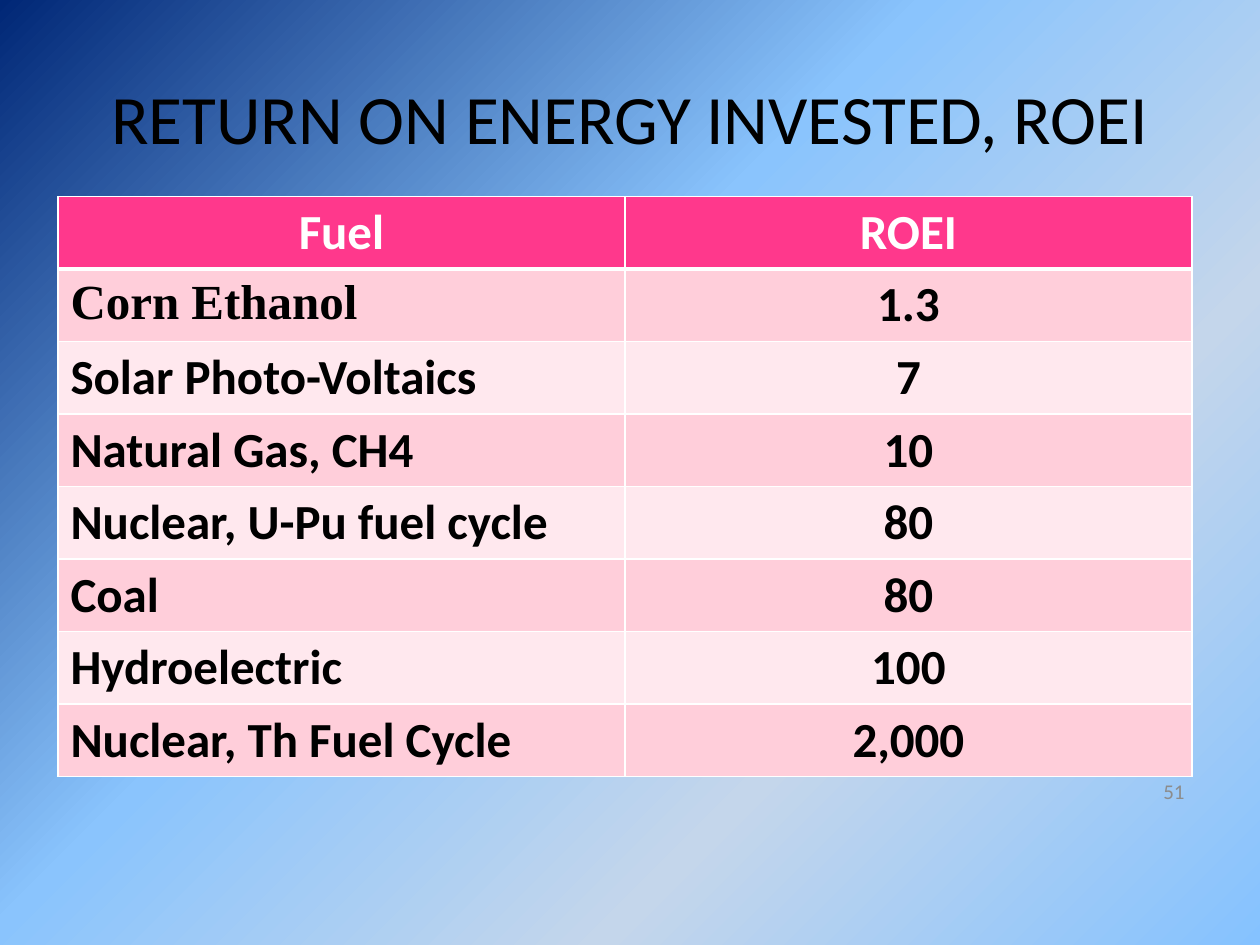
"""Build a slide with a table of the return on energy invested for seven fuels."""
from dataclasses import dataclass

from lxml import etree
from pptx import Presentation
from pptx import util as u
from pptx.dml.color import RGBColor
from pptx.enum import text
from pptx.oxml import ns


@dataclass(frozen=True)
class Theme:
    font: str = "Calibri"
    serif: str = "Times New Roman"
    ink: str = "000000"
    white: str = "FFFFFF"
    grey: str = "8C8C8C"
    header: str = "FF388C"
    bands: tuple = ("FFCEDA", "FFE8EE")
    sky: tuple = ((0, "002776"), (42, "8AC4FD"), (70, "C4D6EB"), (100, "85C2FF"))
    title_size: float = 39.6
    table_size: float = 28
    number_size: float = 12


theme = Theme()
ROWS = [
    ("Fuel", "ROEI"),
    ("Corn Ethanol", "1.3"),
    ("Solar Photo-Voltaics", "7"),
    ("Natural Gas, CH4", "10"),
    ("Nuclear, U-Pu fuel cycle", "80"),
    ("Coal", "80"),
    ("Hydroelectric", "100"),
    ("Nuclear, Th Fuel Cycle", "2,000"),
]


def write(frame, words, size, color, align, name=theme.font, bold=False):
    para = frame.paragraphs[0]
    para.text = words
    para.alignment = align
    para.font.name, para.font.size, para.font.bold = name, u.Pt(size), bold
    para.font.color.rgb = RGBColor.from_string(color)


def add_border(cell, place, side, points):
    line = etree.Element(ns.qn(f"a:ln{side}"), w=str(u.Pt(points)))
    solid = etree.SubElement(line, ns.qn("a:solidFill"))
    etree.SubElement(solid, ns.qn("a:srgbClr"), val=theme.white)
    cell._tc.get_or_add_tcPr().insert(place, line)


deck = Presentation()
deck.slide_width, deck.slide_height = u.Inches(10), u.Inches(7.5)
page = deck.slides.add_slide(deck.slide_layouts[6])

background = page.background.fill
background.gradient()
background.gradient_angle = 315
stops = page._element.find(".//" + ns.qn("a:gsLst"))
for stop in list(stops):
    stops.remove(stop)
for percent, color in theme.sky:
    stop = etree.SubElement(stops, ns.qn("a:gs"), pos=str(percent * 1000))
    etree.SubElement(stop, ns.qn("a:srgbClr"), val=color)

align = text.PP_ALIGN
labels = [
    ((0.5, 0.3, 9, 1.25), "RETURN ON ENERGY INVESTED, ROEI", theme.title_size, theme.ink, align.CENTER),
    ((7.17, 6.08, 2.33, 0.4), "51", theme.number_size, theme.grey, align.RIGHT),
]

column_width, row_height = u.Inches(4.5), u.Inches(0.57)
table = page.shapes.add_table(
    len(ROWS), 2, u.Inches(0.46), u.Inches(1.56), 2 * column_width, len(ROWS) * row_height
).table
for row, values in enumerate(ROWS):
    is_header = row == 0
    for column, value in enumerate(values):
        cell = table.cell(row, column)
        cell.fill.solid()
        fill = theme.header if is_header else theme.bands[(row - 1) % 2]
        cell.fill.fore_color.rgb = RGBColor.from_string(fill)
        write(
            cell.text_frame,
            value,
            theme.table_size,
            theme.white if is_header else theme.ink,
            align.CENTER if is_header or column else align.LEFT,
            theme.serif if value == "Corn Ethanol" else theme.font,
            bold=True,
        )
        widths = {"L": 1, "R": 1, "T": 3 if row == 1 else 1, "B": 3 if is_header else 1}
        for place, (side, points) in enumerate(widths.items()):
            add_border(cell, place, side, points)

for area, words, size, color, alignment in labels:
    box = page.shapes.add_textbox(*map(u.Inches, area))
    box.text_frame.word_wrap = True
    box.text_frame.vertical_anchor = text.MSO_ANCHOR.MIDDLE
    write(box.text_frame, words, size, color, alignment)

deck.save("out.pptx")
